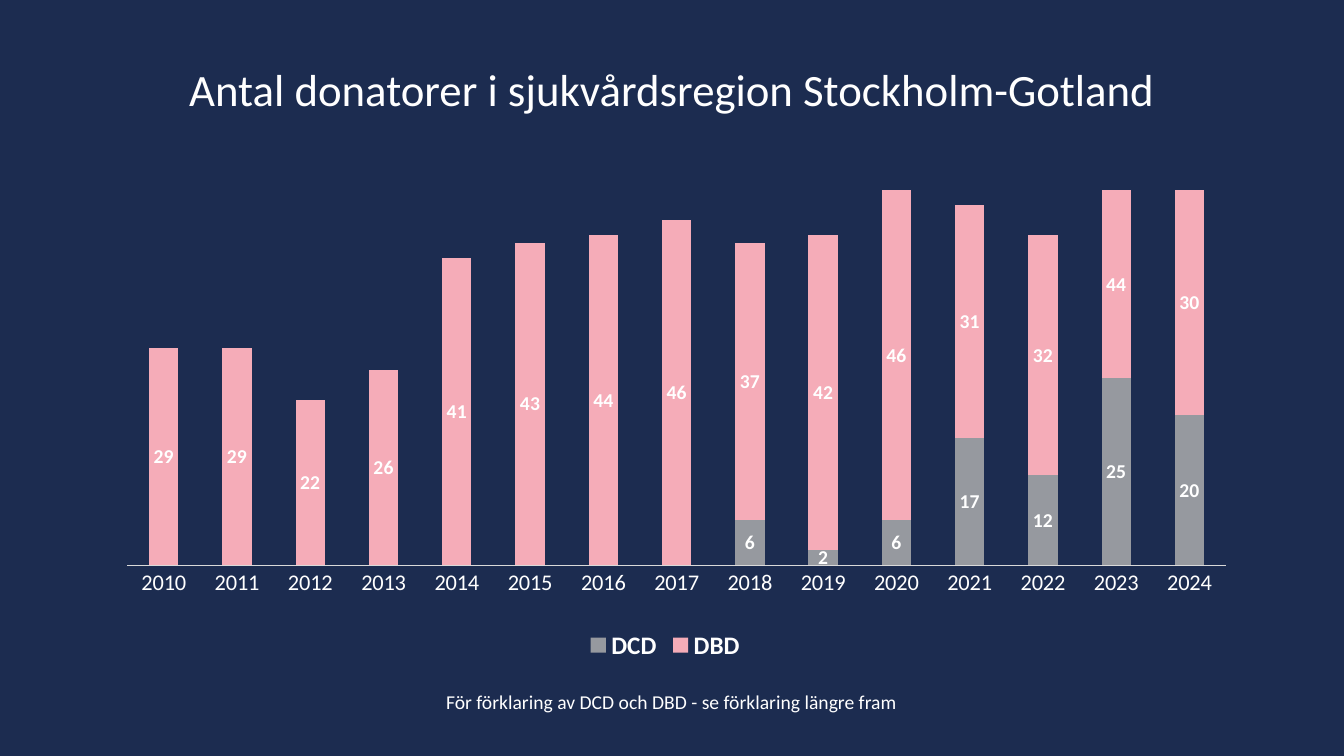
from dataclasses import dataclass

from lxml import etree
from pptx import Presentation
from pptx.chart.data import CategoryChartData
from pptx.dml.color import RGBColor
from pptx.enum.chart import XL_CHART_TYPE, XL_LABEL_POSITION, XL_LEGEND_POSITION, XL_TICK_MARK
from pptx.enum.text import MSO_ANCHOR, PP_ALIGN
from pptx.oxml import parse_xml
from pptx.oxml.ns import nsdecls, qn
from pptx.util import Cm, Pt


@dataclass(frozen=True)
class Theme:
    font: str = "Calibri"
    background: str = "1C2C50"
    text: str = "FFFFFF"
    axis: str = "D9D9D9"
    dcd: str = "96999F"
    dbd: str = "F5ACB8"
    title_size: int = 32
    legend_size: int = 18
    axis_size: int = 16
    body_size: int = 14


THEME = Theme()

YEARS = [str(year) for year in range(2010, 2025)]
DCD = [None] * 8 + [6, 2, 6, 17, 12, 25, 20]
DBD = [29, 29, 22, 26, 41, 43, 44, 46, 37, 42, 46, 31, 32, 44, 30]


def rgb(value):
    return RGBColor.from_string(value)


def style_font(font, size, bold=False, color=THEME.text):
    font.name = THEME.font
    font.size = Pt(size)
    font.bold = bold
    font.color.rgb = rgb(color)


def add_text(s, text, left, top, width, height, *, size,
             anchor=MSO_ANCHOR.TOP, align=PP_ALIGN.CENTER, line_spacing=1.0):
    sp = s.shapes.add_textbox(Cm(left), Cm(top), Cm(width), Cm(height))
    tf = sp.text_frame
    tf.word_wrap = True
    tf.vertical_anchor = anchor
    p = tf.paragraphs[0]
    p.alignment = align
    p.line_spacing = line_spacing
    r = p.add_run()
    r.text = text
    style_font(r.font, size)
    return sp


def set_plot_layout(chart, x, y, w, h):
    """Fix the inner plot area, as fractions of the chart."""
    plot_area = chart.plots[0]._element.getparent()
    for old in plot_area.findall(qn("c:layout")):
        plot_area.remove(old)
    layout = parse_xml(f"<c:layout {nsdecls('c')}><c:manualLayout/></c:layout>")
    settings = {"layoutTarget": "inner", "xMode": "edge", "yMode": "edge",
                "x": x, "y": y, "w": w, "h": h}
    for tag, value in settings.items():
        etree.SubElement(layout[0], qn(f"c:{tag}")).set("val", str(value))
    plot_area.insert(0, layout)


def style_axes(chart):
    years = chart.category_axis
    years.major_tick_mark = XL_TICK_MARK.NONE
    years.has_major_gridlines = False
    years.format.line.color.rgb = rgb(THEME.axis)
    years.format.line.width = Pt(0.75)
    style_font(years.tick_labels.font, THEME.axis_size)

    donors = chart.value_axis
    donors.minimum_scale = 0
    donors.maximum_scale = 50
    donors.major_unit = 10
    donors.has_major_gridlines = False
    donors.visible = False


def style_series(series, color):
    series.format.fill.solid()
    series.format.fill.fore_color.rgb = rgb(color)
    labels = series.data_labels
    labels.show_value = True
    labels.position = XL_LABEL_POSITION.CENTER
    style_font(labels.font, THEME.body_size, bold=True)


def add_donor_chart(s, left, top, width, height):
    data = CategoryChartData()
    data.categories = YEARS
    data.add_series("DCD", DCD)
    data.add_series("DBD", DBD)
    chart = s.shapes.add_chart(XL_CHART_TYPE.COLUMN_STACKED, Cm(left), Cm(top),
                               Cm(width), Cm(height), data).chart
    chart.has_title = False
    style_font(chart.font, 10)

    plot = chart.plots[0]
    plot.gap_width = 150
    plot.overlap = 100
    plot.vary_by_categories = False
    for series, color in zip(plot.series, (THEME.dcd, THEME.dbd)):
        style_series(series, color)

    style_axes(chart)
    chart.has_legend = True
    chart.legend.position = XL_LEGEND_POSITION.BOTTOM
    chart.legend.include_in_layout = False
    style_font(chart.legend.font, THEME.legend_size, bold=True)
    set_plot_layout(chart, 0.03, 0.05, 0.96, 0.75)


def main():
    prs = Presentation()
    prs.slide_width, prs.slide_height = Cm(33.87), Cm(19.05)
    s = prs.slides.add_slide(prs.slide_layouts[6])
    s.background.fill.solid()
    s.background.fill.fore_color.rgb = rgb(THEME.background)

    # Title
    add_text(s, "Antal donatorer i sjukvårdsregion Stockholm-Gotland",
             1.52, 0.48, 30.84, 3.68, size=THEME.title_size,
             anchor=MSO_ANCHOR.MIDDLE, line_spacing=0.9)
    # Donors per year
    add_donor_chart(s, 2.34, 4.17, 28.85, 12.6)
    # Footnote
    add_text(s, "För förklaring av DCD och DBD - se förklaring längre fram",
             2.69, 17.25, 28.47, 0.86, size=THEME.body_size)

    prs.save("out.pptx")


if __name__ == "__main__":
    main()
